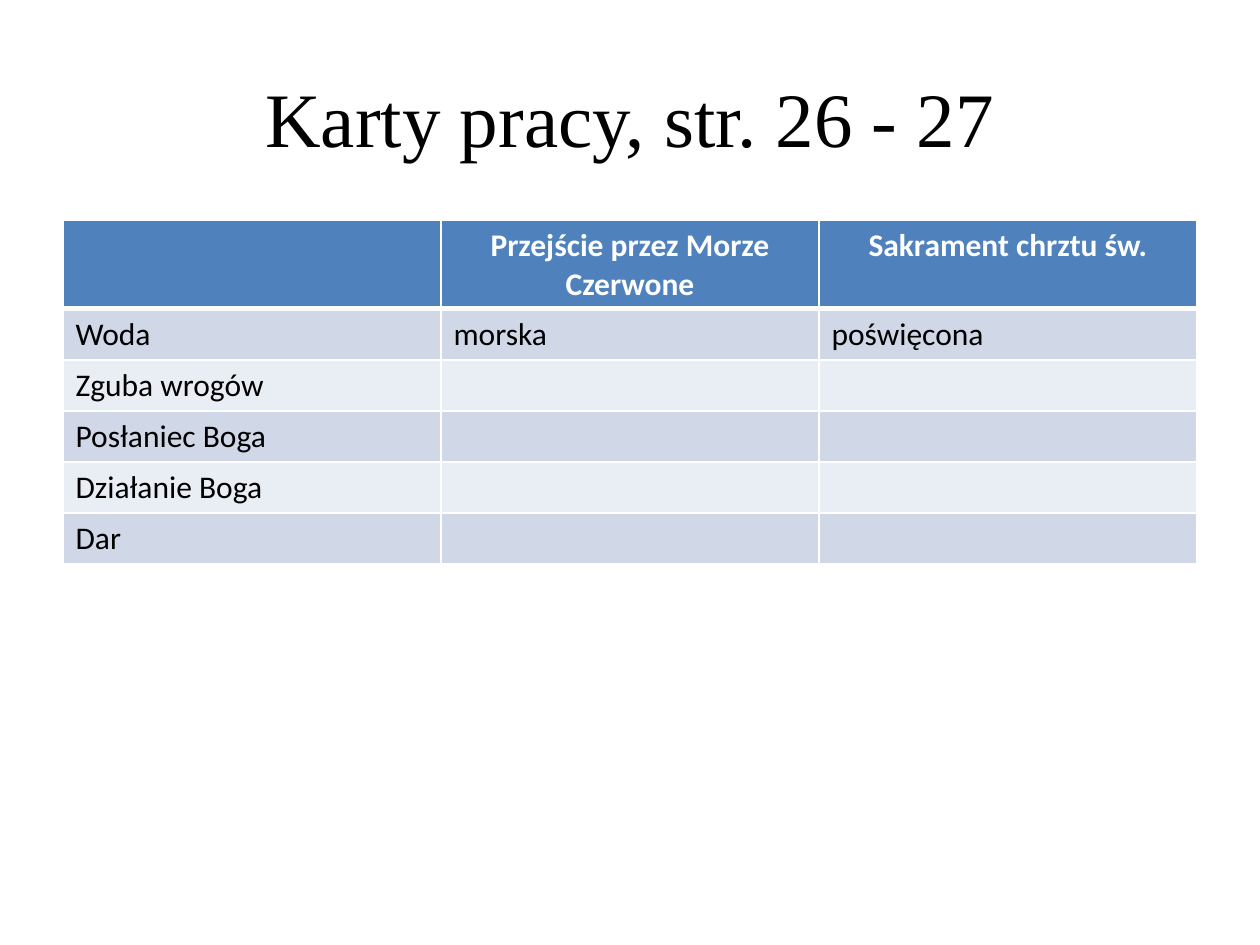
from lxml.etree import SubElement
from pptx import Presentation
from pptx.dml.color import RGBColor
from pptx.enum.text import MSO_ANCHOR, PP_ALIGN
from pptx.oxml.ns import qn
from pptx.util import Pt


def color(value):
    return RGBColor.from_string(value)


def set_borders(cell, bottom_width):
    """Draw white cell borders; call before setting the fill, which must follow them."""
    properties = cell._tc.get_or_add_tcPr()
    for side, width in (("L", 1), ("R", 1), ("T", 1), ("B", bottom_width)):
        line = SubElement(properties, qn(f"a:ln{side}"), w=str(Pt(width)))
        fill = SubElement(line, qn("a:solidFill"))
        SubElement(fill, qn("a:srgbClr"), val="FFFFFF")


ROWS = [
    ("", "Przejście przez Morze Czerwone", "Sakrament chrztu św."),
    ("Woda", "morska", "poświęcona"),
    ("Zguba wrogów", "", ""),
    ("Posłaniec Boga", "", ""),
    ("Działanie Boga", "", ""),
    ("Dar", "", ""),
]
ROW_HEIGHT = 29.2

deck = Presentation()
deck.slide_width, deck.slide_height = Pt(720), Pt(540)
page = deck.slides.add_slide(deck.slide_layouts[6])

title = page.shapes.add_textbox(Pt(36), Pt(21.6), Pt(648), Pt(90))
frame = title.text_frame
frame.word_wrap = True
frame.vertical_anchor = MSO_ANCHOR.MIDDLE
frame.text = "Karty pracy, str. 26 - 27"
paragraph = frame.paragraphs[0]
paragraph.alignment = PP_ALIGN.CENTER
font = paragraph.runs[0].font
font.name, font.size = "Times New Roman", Pt(44)
font.color.rgb = color("000000")

table = page.shapes.add_table(
    len(ROWS), 3, Pt(36), Pt(126), Pt(648), Pt(ROW_HEIGHT * len(ROWS))
).table
for row_index, texts in enumerate(ROWS):
    is_header = row_index == 0
    if is_header:
        fill_color = "4F81BD"
    else:
        fill_color = "D0D8E8" if row_index % 2 else "E9EDF4"
    for column_index, text in enumerate(texts):
        cell = table.cell(row_index, column_index)
        set_borders(cell, 3 if is_header else 1)
        cell.fill.solid()
        cell.fill.fore_color.rgb = color(fill_color)
        cell.text_frame.text = text
        paragraph = cell.text_frame.paragraphs[0]
        if is_header:
            paragraph.alignment = PP_ALIGN.CENTER
        for span in paragraph.runs:
            span.font.name, span.font.size = "Calibri", Pt(18)
            span.font.bold = is_header
            span.font.color.rgb = color("FFFFFF" if is_header else "000000")

deck.save("out.pptx")
